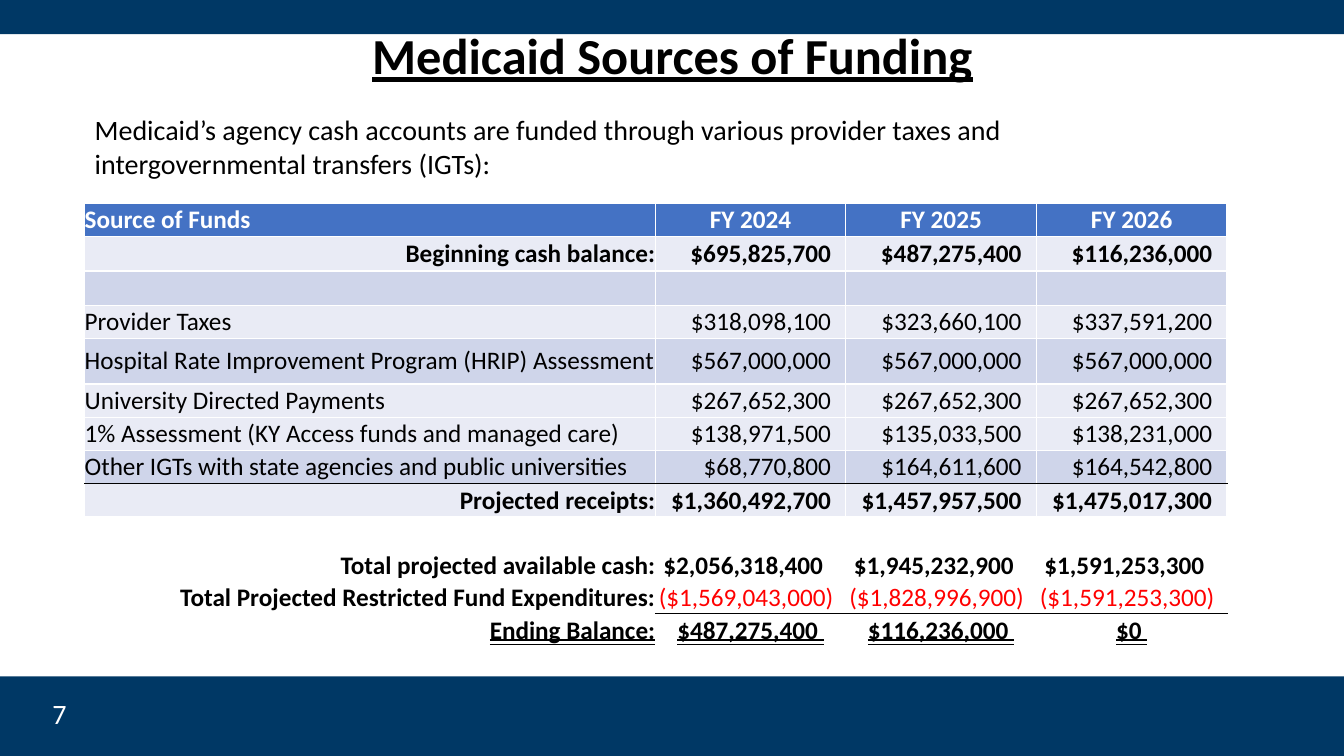
from dataclasses import dataclass

from lxml import etree
from pptx import Presentation
from pptx.dml.color import RGBColor
from pptx.enum.shapes import MSO_SHAPE
from pptx.enum.text import MSO_ANCHOR, MSO_AUTO_SIZE, MSO_UNDERLINE, PP_ALIGN
from pptx.oxml.ns import qn
from pptx.util import Inches, Pt

LEFT, CENTER, RIGHT = PP_ALIGN.LEFT, PP_ALIGN.CENTER, PP_ALIGN.RIGHT
TOP, MIDDLE, BOTTOM = MSO_ANCHOR.TOP, MSO_ANCHOR.MIDDLE, MSO_ANCHOR.BOTTOM
DOUBLE = MSO_UNDERLINE.DOUBLE_LINE
RECTANGLE = MSO_SHAPE.RECTANGLE
NO_AUTOFIT = MSO_AUTO_SIZE.NONE

FONT = "Calibri"
NAVY, BLUE, PALE, TINT = "003865", "4472C4", "E9EBF5", "CFD5EA"
WHITE, BLACK, RED = "FFFFFF", "000000", "FF0000"
LABEL_WIDTH, YEAR_WIDTH = 5.66, 1.89


@dataclass
class Rule:
    color: str = WHITE
    width: float = 1


@dataclass
class FundRow:
    label: str
    amounts: tuple[str, ...]
    fill: str
    height: float = 0.33
    bold: bool = False
    color: str = BLACK
    label_align: PP_ALIGN = LEFT
    amount_align: PP_ALIGN = RIGHT
    label_anchor: MSO_ANCHOR = MIDDLE
    amount_anchor: MSO_ANCHOR = MIDDLE
    amount_margin: float = 0.09
    underline: MSO_UNDERLINE | None = None
    amount_color: str | None = None
    amount_bold: bool | None = None


BLANK = ("", "", "")
TOTAL = {"fill": WHITE, "height": 0.32, "bold": True,
         "label_align": RIGHT, "amount_align": CENTER}
ROWS = [
    FundRow("Source of Funds", ("FY 2024", "FY 2025", "FY 2026"), BLUE, bold=True,
            color=WHITE, amount_align=CENTER, amount_margin=0),
    FundRow("Beginning cash balance:",
            ("$695,825,700 ", "$487,275,400 ", "$116,236,000 "),
            PALE, 0.34, bold=True, label_align=RIGHT),
    FundRow("", BLANK, TINT, 0.34),
    FundRow("Provider Taxes",
            ("$318,098,100 ", "$323,660,100 ", "$337,591,200 "), PALE),
    FundRow("Hospital Rate Improvement Program (HRIP) Assessment",
            ("$567,000,000 ",) * 3, TINT, 0.45),
    FundRow("University Directed Payments", ("$267,652,300 ",) * 3, PALE),
    FundRow("1% Assessment (KY Access funds and managed care)",
            ("$138,971,500 ", "$135,033,500 ", "$138,231,000 "), PALE),
    FundRow("Other IGTs with state agencies and public universities",
            ("$68,770,800 ", "$164,611,600 ", "$164,542,800 "), TINT),
    FundRow("Projected receipts:",
            ("$1,360,492,700 ", "$1,457,957,500 ", "$1,475,017,300 "),
            PALE, bold=True, label_align=RIGHT),
    FundRow("", BLANK, WHITE, 0.32),
    FundRow("Total projected available cash:",
            ("$2,056,318,400 ", "$1,945,232,900 ", "$1,591,253,300 "), **TOTAL),
    FundRow("Total Projected Restricted Fund Expenditures:",
            ("($1,569,043,000)", "($1,828,996,900)", "($1,591,253,300)"),
            label_anchor=BOTTOM, amount_color=RED, amount_bold=False, **TOTAL),
    FundRow("Ending Balance:", ("$487,275,400 ", "$116,236,000 ", "$0 "),
            label_anchor=BOTTOM, amount_anchor=BOTTOM, amount_margin=0,
            underline=DOUBLE, **TOTAL),
]


def rgb(color: str) -> RGBColor:
    return RGBColor.from_string(color)


def write(tf, text: str, align: PP_ALIGN, size: float, color: str, **formats) -> None:
    p = tf.paragraphs[0]
    p.alignment = align
    if not text:
        return
    r = p.add_run()
    r.text = text
    for name, value in {"name": FONT, "size": Pt(size), **formats}.items():
        setattr(r.font, name, value)
    r.font.color.rgb = rgb(color)


def add_bar(s, top: float, height: float) -> None:
    sp = s.shapes.add_shape(RECTANGLE, 0, Inches(top), Inches(13.33), Inches(height))
    sp.shadow.inherit = False
    sp.fill.solid()
    sp.fill.fore_color.rgb = rgb(NAVY)
    sp.line.fill.background()


def add_text(s, box: tuple[float, ...], text: str, align: PP_ALIGN,
             anchor: MSO_ANCHOR, color: str, **margins) -> None:
    tf = s.shapes.add_textbox(*map(Inches, box)).text_frame
    tf.word_wrap = True
    tf.vertical_anchor = anchor
    for name, value in margins.items():
        setattr(tf, name, Inches(value))
    write(tf, text, align, 20, color)


def add_border(cell, tag: str, rule: Rule) -> None:
    ln = etree.SubElement(cell._tc.get_or_add_tcPr(), qn(f"a:{tag}"),
                          w=str(Pt(rule.width)), cmpd="sng")
    fill = etree.SubElement(ln, qn("a:solidFill"))
    etree.SubElement(fill, qn("a:srgbClr"), val=rule.color)


def rule_below(row: int, col: int) -> Rule:
    if row == 1:
        return Rule(WHITE, 1.5)
    if row == 7:
        return Rule(BLACK, 1)
    if row == 11 and col > 0:
        return Rule(BLACK, 0.5)
    return Rule()


def fill_cell(cell, row: int, col: int, fund: FundRow) -> None:
    borders = {"lnL": Rule(), "lnR": Rule(),
               "lnT": rule_below(row - 1, col), "lnB": rule_below(row, col)}
    for tag, rule in borders.items():
        add_border(cell, tag, rule)
    cell.fill.solid()
    cell.fill.fore_color.rgb = rgb(fund.fill)
    cell.margin_left = cell.margin_top = cell.margin_bottom = 0
    text, align, anchor = fund.label, fund.label_align, fund.label_anchor
    margin, color, bold = 0, fund.color, fund.bold
    if col > 0:
        text, align, anchor = fund.amounts[col - 1], fund.amount_align, fund.amount_anchor
        margin, color = fund.amount_margin, fund.amount_color or color
        bold = bold if fund.amount_bold is None else fund.amount_bold
    cell.margin_right = Inches(margin)
    cell.vertical_anchor = anchor
    write(cell.text_frame, text, align, 18, color, bold=bold, underline=fund.underline)


def add_funds_table(s) -> None:
    height = sum(fund.height for fund in ROWS)
    table = s.shapes.add_table(len(ROWS), 4, Inches(0.84), Inches(2.02),
                               Inches(LABEL_WIDTH + 3 * YEAR_WIDTH), Inches(height)).table
    table.horz_banding = False
    for col, column in enumerate(table.columns):
        column.width = Inches(YEAR_WIDTH if col else LABEL_WIDTH)
    for row, fund in enumerate(ROWS):
        table.rows[row].height = Inches(fund.height)
        for col in range(4):
            fill_cell(table.cell(row, col), row, col, fund)


def add_title(s, text: str) -> None:
    sp = s.shapes.title
    sp.left, sp.top, sp.width, sp.height = map(Inches, (2.16, 0.26, 9.02, 0.63))
    tf = sp.text_frame
    tf.auto_size = NO_AUTOFIT
    tf.vertical_anchor = MIDDLE
    write(tf, text, CENTER, 36, BLACK, bold=True, underline=True)
    tf.paragraphs[0].line_spacing = 0.9
    s.shapes._spTree.append(sp._element)


def main() -> None:
    prs = Presentation()
    prs.slide_width, prs.slide_height = Inches(13.33), Inches(7.5)
    s = prs.slides.add_slide(prs.slide_layouts[5])
    add_bar(s, 0, 0.34)
    add_bar(s, 6.71, 0.79)
    add_title(s, "Medicaid Sources of Funding")
    add_text(s, (0.26, 6.95, 0.5, 0.26), "7", RIGHT, MIDDLE, WHITE,
             margin_top=0, margin_bottom=0)
    add_text(s, (0.84, 1.07, 11.34, 0.77),
             "Medicaid’s agency cash accounts are funded through various provider taxes "
             "and intergovernmental transfers (IGTs):", LEFT, TOP, BLACK, margin_right=0.5)
    add_funds_table(s)
    prs.save("out.pptx")


if __name__ == "__main__":
    main()
